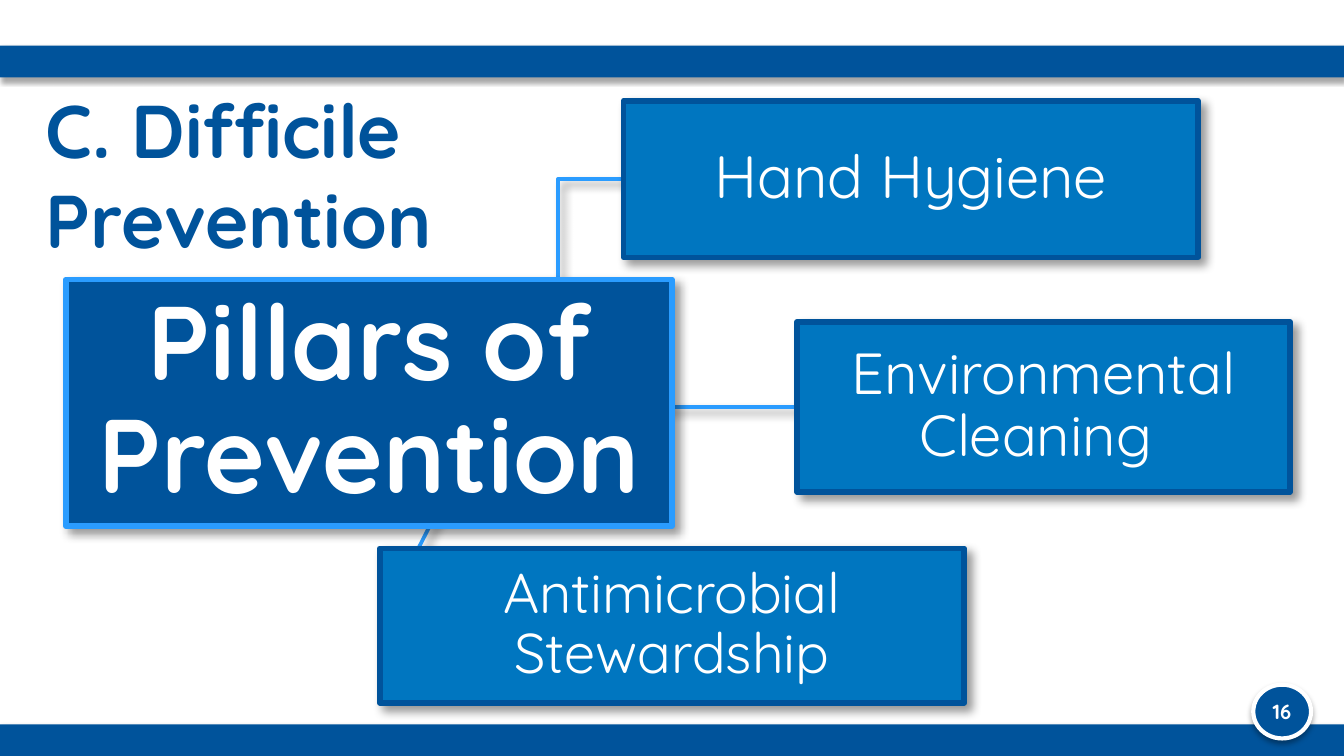
from lxml import etree
from pptx import Presentation
from pptx.dml.color import RGBColor
from pptx.enum.shapes import MSO_CONNECTOR, MSO_SHAPE
from pptx.enum.text import MSO_ANCHOR, PP_ALIGN
from pptx.oxml.ns import qn
from pptx.util import Pt

RECT, OVAL = MSO_SHAPE.RECTANGLE, MSO_SHAPE.OVAL
STRAIGHT, ELBOW = MSO_CONNECTOR.STRAIGHT, MSO_CONNECTOR.ELBOW
TOP, MIDDLE = MSO_ANCHOR.TOP, MSO_ANCHOR.MIDDLE
LEFT, CENTER = PP_ALIGN.LEFT, PP_ALIGN.CENTER

PX = 4572  # 200 px to the inch
FONT = "Quicksand"
COLORS = {
    name: RGBColor.from_string(value)
    for name, value in {
        "navy": "00539B",
        "blue": "0076C0",
        "sky": "2A9CFF",
        "white": "FFFFFF",
    }.items()
}
# Shadows: opacity %, blur pt, distance pt, direction degrees
FRAME_SHADOW = (35, 3.1, 1.8, 90)
DIAGRAM_SHADOW = (40, 5, 4, 45)


def add_shadow(item, opacity, blur, distance, direction):
    effects = etree.SubElement(item._element.spPr, qn("a:effectLst"))
    outer = etree.SubElement(
        effects, qn("a:outerShdw"), blurRad=str(Pt(blur)), dist=str(Pt(distance)),
        dir=str(direction * 60000), algn="ctr", rotWithShape="0")
    color = etree.SubElement(outer, qn("a:srgbClr"), val="000000")
    etree.SubElement(color, qn("a:alpha"), val=str(opacity * 1000))


def write(holder, text, size, color="white", bold=False, align=CENTER,
          anchor=MIDDLE, spacing=1.0, inset_x=0, inset_y=0):
    frame = holder.text_frame
    frame.word_wrap = True
    frame.vertical_anchor = anchor
    frame.margin_left = frame.margin_right = inset_x * PX
    frame.margin_top = frame.margin_bottom = inset_y * PX
    paragraph = frame.paragraphs[0]
    paragraph.alignment = align
    paragraph.line_spacing = spacing
    run = paragraph.add_run()
    run.text = text
    run.font.name = FONT
    run.font.size = Pt(size)
    run.font.bold = bold
    run.font.color.rgb = COLORS[color]


prs = Presentation()
prs.slide_width, prs.slide_height = 2000 * PX, 1125 * PX
slide = prs.slides.add_slide(prs.slide_layouts[6])
shapes = slide.shapes

# Top and bottom bars
for bar_top in (68, 1078):
    bar = shapes.add_shape(RECT, 0, bar_top * PX, 2002 * PX, 47 * PX)
    bar.fill.solid()
    bar.fill.fore_color.rgb = COLORS["navy"]
    bar.line.fill.background()
    add_shadow(bar, *FRAME_SHADOW)

# Page number badge
badge = shapes.add_shape(OVAL, 1865 * PX, 1019 * PX, 86 * PX, 80 * PX)
badge.fill.solid()
badge.fill.fore_color.rgb = COLORS["navy"]
badge.line.color.rgb = COLORS["white"]
badge.line.width = Pt(2.25)
add_shadow(badge, *FRAME_SHADOW)
write(badge, "16", 11, bold=True)

# Title
title = shapes.add_textbox(48 * PX, 115 * PX, 910 * PX, 250 * PX)
write(title, "C. Difficile Prevention", 40, color="navy", bold=True,
      align=LEFT, anchor=TOP, inset_x=20, inset_y=10)

# Branches from the centre of the hub, drawn behind the boxes
for kind, end_x, end_y in (
    (STRAIGHT, 564, 932),
    (ELBOW, 1186, 606),
    (ELBOW, 928, 267),
):
    branch = shapes.add_connector(kind, 732 * PX, 600 * PX, end_x * PX, end_y * PX)
    branch.line.color.rgb = COLORS["sky"]
    branch.line.width = Pt(2)
    add_shadow(branch, *DIAGRAM_SHADOW)

# Hub and its three pillars
for text, x, y, width, height, fill, border, size, bold, inset in (
    ("Pillars of Prevention", 98, 416, 902, 367, "navy", "sky", 56, True, 8),
    ("Hand Hygiene", 928, 150, 855, 233, "blue", "navy", 32, False, 4),
    ("Environmental Cleaning ", 1186, 479, 734, 253, "blue", "navy", 31, False, 4),
    ("Antimicrobial Stewardship", 565, 816, 870, 230, "blue", "navy", 30, False, 4),
):
    box = shapes.add_shape(RECT, x * PX, y * PX, width * PX, height * PX)
    box.fill.solid()
    box.fill.fore_color.rgb = COLORS[fill]
    box.line.color.rgb = COLORS[border]
    box.line.width = Pt(3)
    add_shadow(box, *DIAGRAM_SHADOW)
    write(box, text, size, bold=bold, spacing=0.9, inset_x=inset, inset_y=inset)

prs.save("out.pptx")
